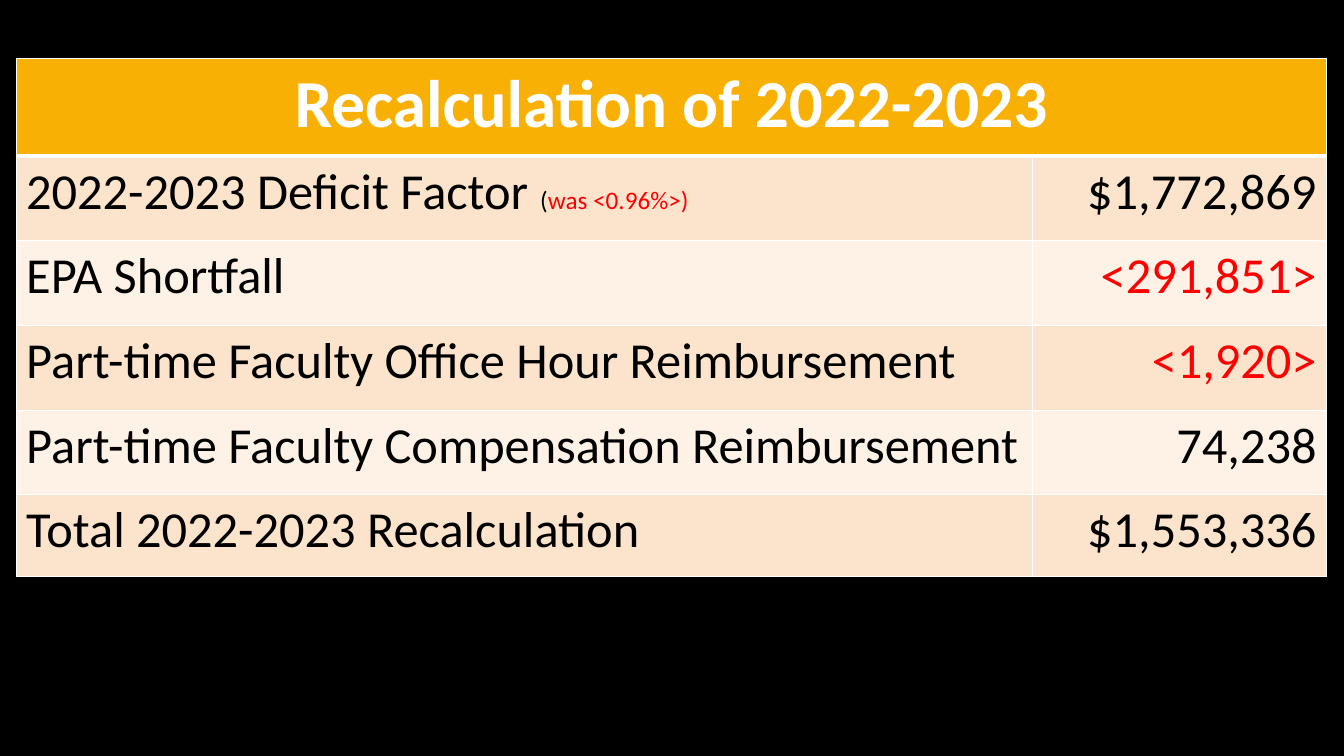
from lxml import etree
from pptx import Presentation
from pptx.dml.color import RGBColor
from pptx.enum.text import PP_ALIGN as Align
from pptx.oxml.ns import qn
from pptx.util import Inches, Pt

BLACK, WHITE, RED = "000000", "FFFFFF", "FF0000"
GOLD, PEACH, CREAM = "F8B004", "FCE4CC", "FEF2E7"


def rgb(value):
    return RGBColor.from_string(value)


def fill_cell(cell, runs, fill, size=36, bold=False, align=Align.LEFT, top=1, bottom=1):
    tcPr = cell._tc.get_or_add_tcPr()
    for side, width in (("L", 1), ("R", 1), ("T", top), ("B", bottom)):
        ln = etree.SubElement(tcPr, qn(f"a:ln{side}"), w=str(Pt(width)))
        solid = etree.SubElement(ln, qn("a:solidFill"))
        etree.SubElement(solid, qn("a:srgbClr"), val=WHITE)
    cell.fill.solid()
    cell.fill.fore_color.rgb = rgb(fill)
    p = cell.text_frame.paragraphs[0]
    p.alignment = align
    for text, color, *run_size in runs:
        r = p.add_run()
        r.text = text
        r.font.name = "Calibri"
        r.font.size = Pt(run_size[0] if run_size else size)
        r.font.bold = bold
        r.font.color.rgb = rgb(color)


prs = Presentation()
prs.slide_width, prs.slide_height = Inches(13.33), Inches(7.5)
s = prs.slides.add_slide(prs.slide_layouts[6])
s.background.fill.solid()
s.background.fill.fore_color.rgb = rgb(BLACK)

items = [
    ([("2022-2023 Deficit Factor ", BLACK), ("(", BLACK, 18), ("was <0.96%>)", RED, 18)], "$1,772,869"),
    ([("EPA Shortfall", BLACK)], "<291,851>"),
    ([("Part-time Faculty Office Hour Reimbursement", BLACK)], "<1,920>"),
    ([("Part-time Faculty Compensation Reimbursement", BLACK)], "74,238"),
    ([("Total 2022-2023 Recalculation", BLACK)], "$1,553,336"),
]
widths = [10.08, 2.92]
heights = [0.97] + [0.84] * 4 + [0.81]

table = s.shapes.add_table(len(heights), len(widths), Inches(0.16), Inches(0.58),
                           Inches(sum(widths)), Inches(sum(heights))).table
for column, width in zip(table.columns, widths):
    column.width = Inches(width)
for row, height in zip(table.rows, heights):
    row.height = Inches(height)

table.cell(0, 0).merge(table.cell(0, 1))
fill_cell(table.cell(0, 0), [("Recalculation of 2022-2023", WHITE)], GOLD,
          size=48, bold=True, align=Align.CENTER, bottom=3)
fill_cell(table.cell(0, 1), [], GOLD, bottom=3)

for i, (label, amount) in enumerate(items, 1):
    fill = PEACH if i % 2 else CREAM
    top = 3 if i == 1 else 1
    color = RED if amount.startswith("<") else BLACK
    fill_cell(table.cell(i, 0), label, fill, top=top)
    fill_cell(table.cell(i, 1), [(amount, color)], fill, align=Align.RIGHT, top=top)

prs.save("out.pptx")
